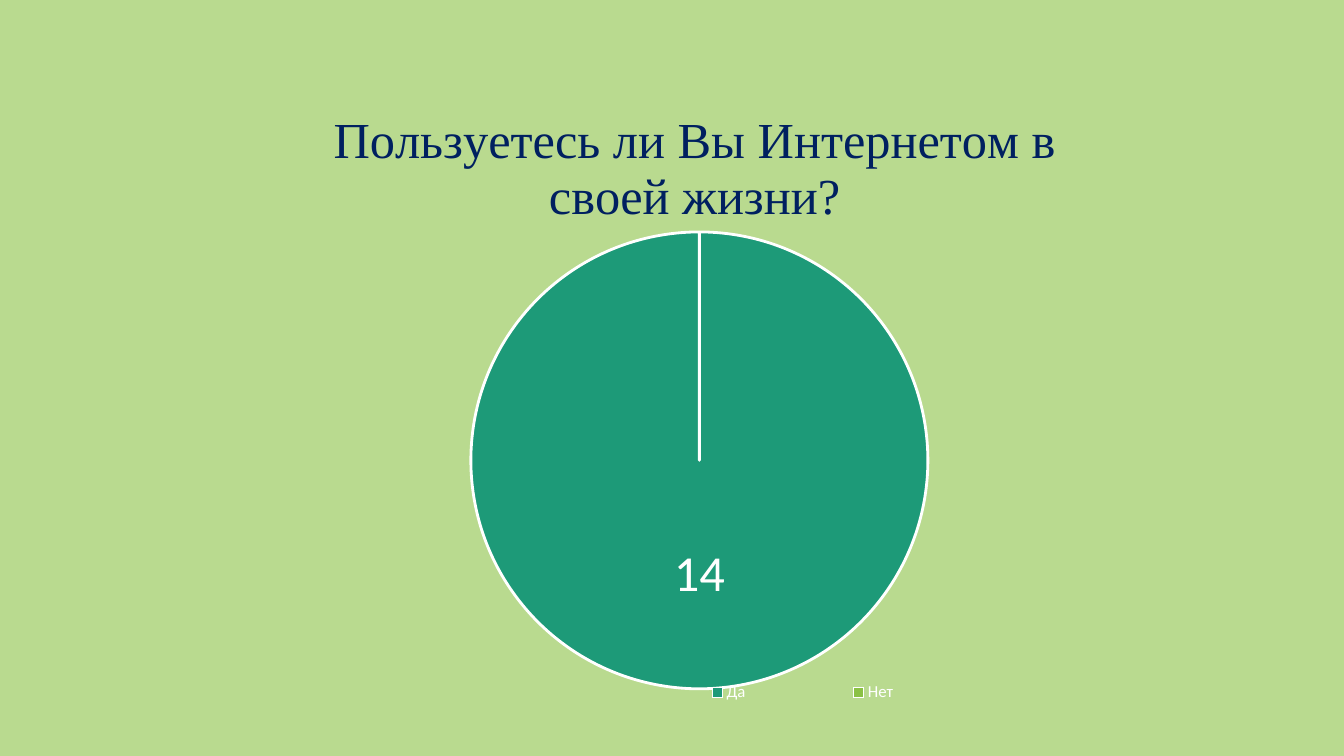
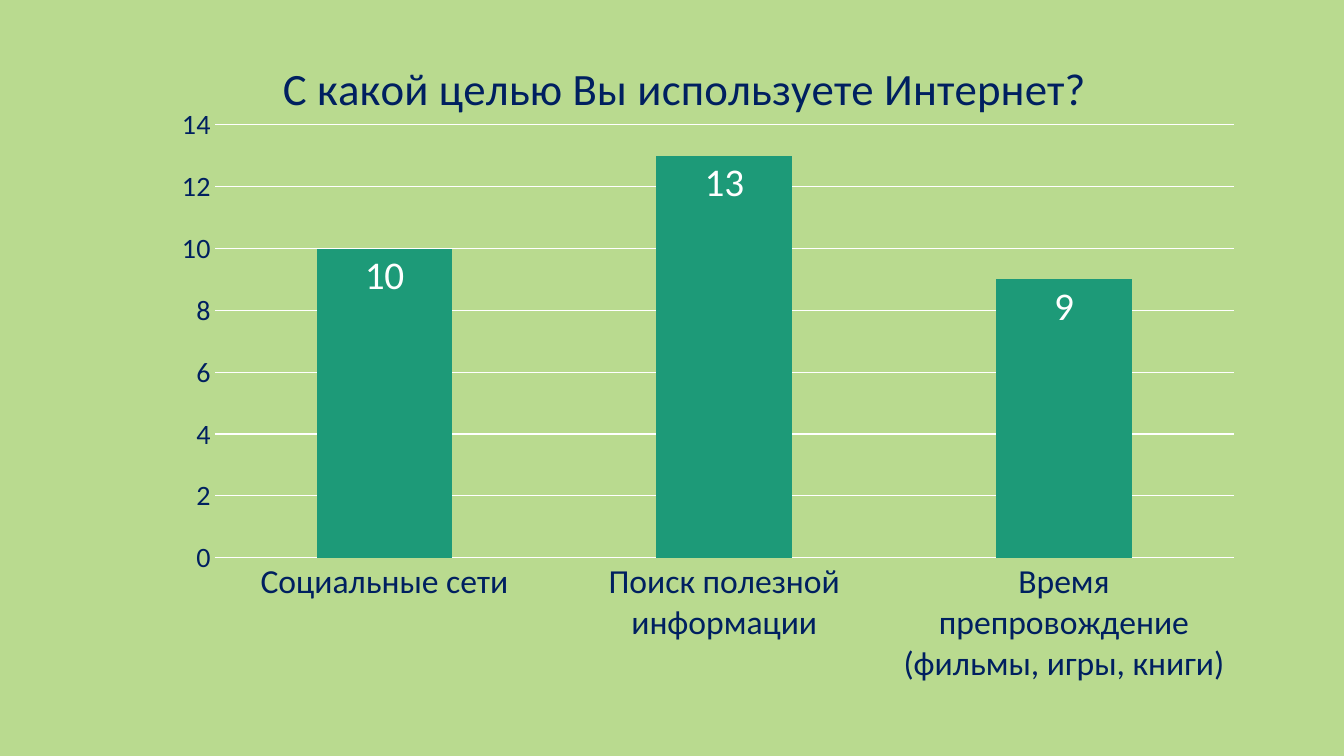
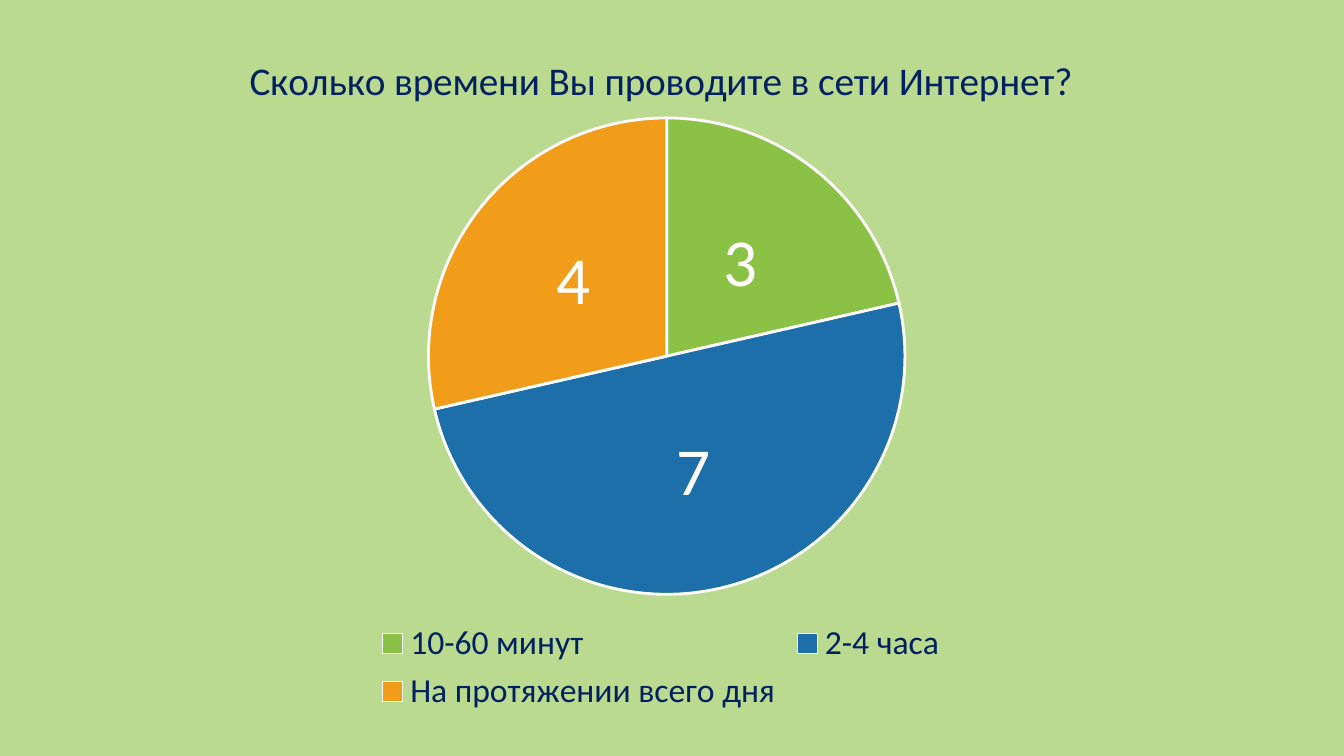
from lxml import etree
from pptx import Presentation
from pptx.chart.data import CategoryChartData
from pptx.dml.color import RGBColor
from pptx.enum.chart import (XL_CHART_TYPE, XL_LABEL_POSITION,
                             XL_LEGEND_POSITION, XL_TICK_MARK)
from pptx.oxml.ns import qn
from pptx.util import Inches, Pt

PIE = XL_CHART_TYPE.PIE
COLUMN = XL_CHART_TYPE.COLUMN_CLUSTERED
CENTER = XL_LABEL_POSITION.CENTER
INSIDE = XL_LABEL_POSITION.INSIDE_END
BOTTOM = XL_LEGEND_POSITION.BOTTOM
NONE = XL_TICK_MARK.NONE

HUES = {
    "page": "B9DA8F",
    "navy": "002060",
    "white": "FFFFFF",
    "teal": "1D9A78",
    "green": "8BC145",
    "blue": "1D6FA9",
    "orange": "F19D19",
}


def hue(name):
    return RGBColor.from_string(HUES[name])


def style(font, size, color="navy", face="Calibri"):
    font.size = Pt(size)
    font.name = face
    font.bold = False
    font.color.rgb = hue(color)


def write(frame, text, **form):
    frame.text = text
    style(frame.paragraphs[0].runs[0].font, **form)


def paint(form, color):
    form.fill.solid()
    form.fill.fore_color.rgb = hue(color)


def rule(line, width):
    line.color.rgb = hue("white")
    line.width = Pt(width)


def place(node, index, box, inner=False):
    for old in node.findall(qn("c:layout")):
        node.remove(old)
    layout = etree.Element(qn("c:layout"))
    node.insert(index, layout)
    manual = etree.SubElement(layout, qn("c:manualLayout"))
    parts = [("layoutTarget", "inner")] if inner else []
    parts += [("xMode", "edge"), ("yMode", "edge")]
    parts += zip("xywh", box)
    for tag, value in parts:
        etree.SubElement(manual, qn("c:" + tag)).set("val", str(value))


def draw(deck, kind, box, title, form, data, area, label, spot):
    slide = deck.slides.add_slide(deck.slide_layouts[6])
    source = CategoryChartData(number_format="General")
    source.categories = list(data)
    source.add_series("Series 1", list(data.values()))
    sides = [Inches(side) for side in box]
    chart = slide.shapes.add_chart(kind, *sides, source).chart
    style(chart.font, 20)
    chart.has_title = True
    write(chart.chart_title.text_frame, title, **form)
    chart.chart_title.include_in_layout = False
    chart.has_legend = False
    place(chart.plots[0]._element.getparent(), 0, area, inner=True)
    plot = chart.plots[0]
    plot.vary_by_categories = kind == PIE
    plot.has_data_labels = True
    labels = plot.data_labels
    labels.show_value = True
    labels.position = spot
    style(labels.font, label, "white")
    return chart


def pie(deck, box, title, form, data, area, label, colors, legend, key=None):
    chart = draw(deck, PIE, box, title, form, data, area, label, CENTER)
    series = chart.plots[0].series[0]
    for index, color in enumerate(colors):
        point = series.points[index].format
        paint(point, color)
        rule(point.line, 2)
    chart.has_legend = True
    chart.legend.position = BOTTOM
    chart.legend.include_in_layout = False
    style(chart.legend.font, **legend)
    if key:
        place(chart.legend._element, 1, key)


def bars(deck, box, title, form, data, area, label):
    chart = draw(deck, COLUMN, box, title, form, data, area, label, INSIDE)
    plot = chart.plots[0]
    plot.gap_width = 150
    paint(plot.series[0].format, "teal")
    for axis, size in ((chart.category_axis, 24), (chart.value_axis, 20)):
        axis.major_tick_mark = NONE
        axis.minor_tick_mark = NONE
        style(axis.tick_labels.font, size)
    rule(chart.category_axis.format.line, 0.75)
    scale = chart.value_axis
    scale.minimum_scale = 0
    scale.maximum_scale = 14
    scale.major_unit = 2
    scale.format.line.fill.background()
    scale.has_major_gridlines = True
    rule(scale.major_gridlines.format.line, 0.75)


def main():
    deck = Presentation()
    deck.slide_width = Inches(13.33)
    deck.slide_height = Inches(7.5)
    paint(deck.slide_master.background, "page")
    pie(deck, (2.22, 0.79, 9.34, 6.57),
        "Пользуетесь ли Вы Интернетом в своей жизни?",
        {"size": 36, "face": "Times New Roman"},
        {"Да": 14, "Нет": None},
        (0.26, 0.23, 0.49, 0.69), 36, ("teal", "green"),
        {"size": 12, "color": "white"}, (0.41, 0.9, 0.41, 0.05))
    bars(deck, (1.24, 0.3, 11.11, 6.71),
         "С какой целью Вы используете Интернет?", {"size": 32},
         {"Социальные сети": 10, "Поиск полезной информации": 13,
          "Время препровождение (фильмы, игры, книги)": 9},
         (0.08, 0.14, 0.91, 0.64), 28)
    pie(deck, (0.77, 0.28, 11.57, 6.85),
        "Сколько времени Вы проводите в сети Интернет?", {"size": 28},
        {"10-60 минут": 3, "2-4 часа": 7, "На протяжении всего дня": 4},
        (0.3, 0.13, 0.41, 0.69), 48, ("green", "blue", "orange"),
        {"size": 24})
    deck.save("out.pptx")


if __name__ == "__main__":
    main()
